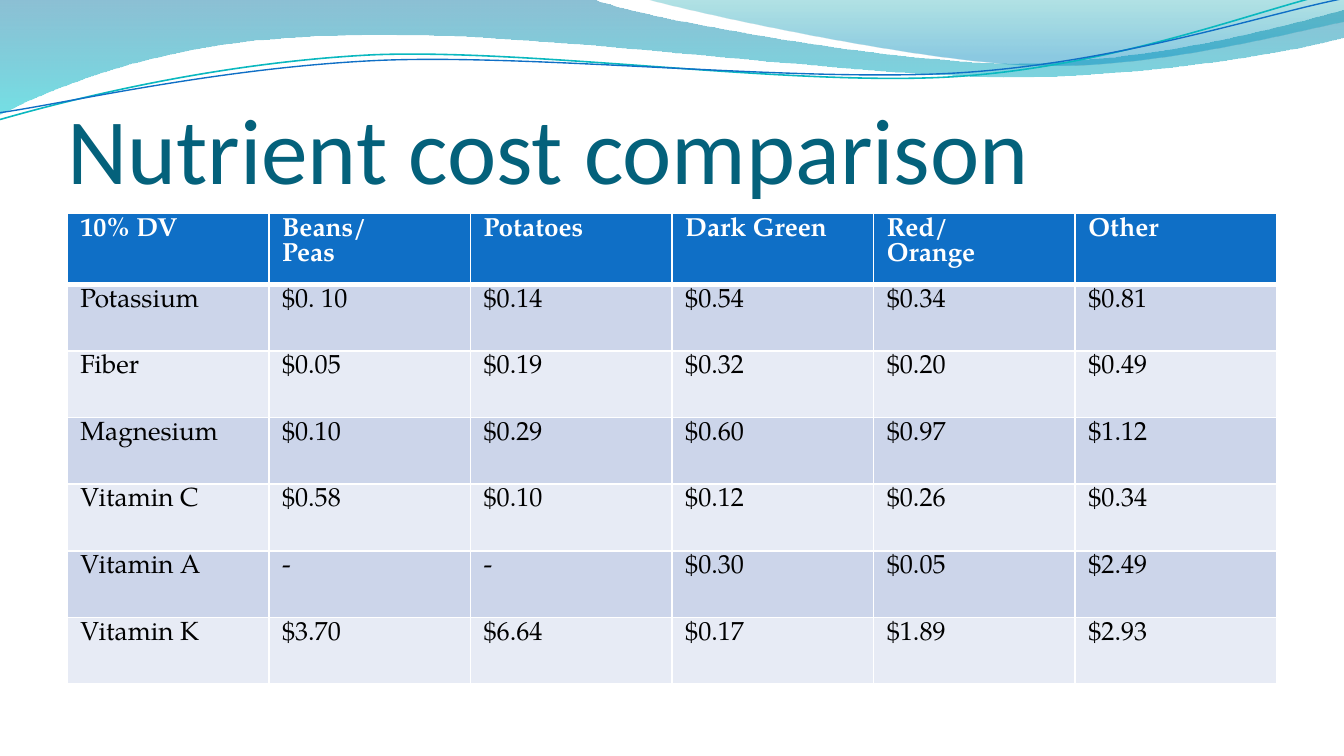
"""Build the nutrient cost comparison slide."""
from dataclasses import dataclass

from pptx import Presentation
from pptx import util as u
from pptx.dml.color import RGBColor
from pptx.enum import text
from pptx.oxml import ns, xmlchemy


@dataclass(frozen=True)
class Theme:
    title_font: str = "Calibri"
    table_font: str = "TeX Gyre Pagella"
    title_size: float = 50
    table_size: float = 14
    table_leading: float = 13.4
    title: str = "04617B"
    header: str = "0F6FC6"
    bands: tuple = ("CCD5EA", "E7EBF5")
    body_text: str = "000000"
    white: str = "FFFFFF"
    wave_stops: tuple = ((0, "0074A1", 45), (1, "00C6CF", 55))
    crest_stops: tuple = ((0, "00A1A9", 30), (0.8, "008BBF", 45))
    teal_line: str = "0AB8BF"
    blue_line: str = "0F6FC6"


def trace(shapes, start, segments, close):
    """Draw an outline in cm; two numbers make a line, six a Bezier curve."""
    points = [(u.Cm(segment[i]), u.Cm(segment[i + 1]))
              for segment in segments for i in range(0, len(segment), 2)]
    builder = shapes.build_freeform(u.Cm(start[0]), u.Cm(start[1]))
    builder.add_line_segments(points, close=close)
    outline = builder.convert_to_shape()
    outline.shadow.inherit = False
    steps = iter(list(outline._element.iter(ns.qn("a:lnTo"))))
    for segment in segments:
        legs = [next(steps) for _ in range(len(segment) // 2)]
        if len(legs) == 3:
            curve = xmlchemy.OxmlElement("a:cubicBezTo")
            legs[0].addprevious(curve)
            for leg in legs:
                curve.append(leg[0])
                leg.getparent().remove(leg)
    return outline


def add_border(cell, side, color, width):
    """Put a solid border on one side of a table cell."""
    border = xmlchemy.OxmlElement(f"a:{side}")
    border.set("w", str(u.Pt(width)))
    solid = xmlchemy.OxmlElement("a:solidFill")
    paint = xmlchemy.OxmlElement("a:srgbClr")
    paint.set("val", color)
    solid.append(paint)
    border.append(solid)
    properties = cell._tc.get_or_add_tcPr()
    properties.insert(len(properties.findall("*")) - 1, border)


theme = Theme()
deck = Presentation()
deck.slide_width, deck.slide_height = u.Cm(25.4), u.Cm(14.29)
slide = deck.slides.add_slide(deck.slide_layouts[5])

waves = [
    ((0, 0), [(11.18, -0.03), (12.09, 0.33, 16.87, 1.19, 19.25, 1.19),
              (21.67, 1.19, 24.33, 0.48, 25.4, 0.18), (25.43, 0.69),
              (24.97, 0.84, 22.1, 1.45, 18.95, 1.45),
              (15.8, 1.42, 9.7, 0.53, 6.53, 0.66),
              (3.28, 0.69, 1.17, 1.57, -0.03, 2.16), (0, 0)], theme.wave_stops),
    ((12.17, -0.03), [(12.93, 0.2, 17.32, 1.17, 19.53, 1.24),
                      (21.74, 1.32, 24.41, 0.61, 25.4, 0.41),
                      (25.4, 0), (12.17, -0.03)], theme.crest_stops),
]
for start, segments, stops in waves:
    wave = trace(slide.shapes, start, segments, True)
    wave.line.fill.background()
    wave.fill.gradient()
    wave.fill.gradient_angle = 270
    for stop, (position, color, opacity) in zip(wave.fill.gradient_stops, stops):
        stop.position = position
        stop.color.rgb = RGBColor.from_string(color)
    paints = wave._element.spPr.iter(ns.qn("a:srgbClr"))
    for paint, (position, color, opacity) in zip(paints, stops):
        alpha = xmlchemy.OxmlElement("a:alpha")
        alpha.set("val", str(opacity * 1000))
        paint.append(alpha)

ripples = [
    ((-0.04, 1.66), [(1.19, 1.37, 4.02, 0.78, 7.05, 0.77),
                     (10.07, 0.79, 15.01, 1.76, 18.06, 1.7),
                     (21.14, 1.64, 23.88, 0.68, 25.4, 0.42)], theme.teal_line, 0.85),
    ((-0.03, 1.53), [(1.16, 1.42, 4.17, 0.87, 7.2, 0.88),
                     (10.22, 0.9, 15.14, 1.69, 18.19, 1.63),
                     (21.22, 1.57, 23.98, 0.78, 25.44, 0.57)], theme.blue_line, 0.75),
]
for start, segments, color, width in ripples:
    ripple = trace(slide.shapes, start, segments, False)
    ripple.rotation = 357.3
    ripple.fill.background()
    ripple.line.color.rgb = RGBColor.from_string(color)
    ripple.line.width = u.Pt(width)

title = slide.shapes.title
slide.shapes._spTree.append(title._element)
title.left, title.top, title.width, title.height = map(u.Cm, (1.27, 1.47, 22.86, 2.38))
title.text = "Nutrient cost comparison"
frame = title.text_frame
frame.auto_size = text.MSO_AUTO_SIZE.NONE
frame.vertical_anchor = text.MSO_ANCHOR.BOTTOM
frame.margin_left = frame.margin_right = frame.margin_bottom = 0
frame.margin_top = u.Cm(0.13)
heading = frame.paragraphs[0]
heading.alignment = text.PP_ALIGN.LEFT
heading.font.name = theme.title_font
heading.font.size = u.Pt(theme.title_size)
heading.font.color.rgb = RGBColor.from_string(theme.title)

costs = [
    ("10% DV", "Beans/\nPeas", "Potatoes", "Dark Green", "Red/\nOrange", "Other"),
    ("Potassium", "$0. 10", "$0.14", "$0.54", "$0.34", "$0.81"),
    ("Fiber", "$0.05", "$0.19", "$0.32", "$0.20", "$0.49"),
    ("Magnesium", "$0.10", "$0.29", "$0.60", "$0.97", "$1.12"),
    ("Vitamin C", "$0.58", "$0.10", "$0.12", "$0.26", "$0.34"),
    ("Vitamin A", "-", "-", "$0.30", "$0.05", "$2.49"),
    ("Vitamin K", "$3.70", "$6.64", "$0.17", "$1.89", "$2.93"),
]
cost_table = slide.shapes.add_table(
    len(costs), len(costs[0]), u.Cm(1.27), u.Cm(4.03), u.Cm(22.86), u.Cm(8.9)).table
for column in cost_table.columns:
    column.width = u.Cm(3.81)
for row_index, nutrient_costs in enumerate(costs):
    is_header = row_index == 0
    cost_table.rows[row_index].height = u.Cm(1.34 if is_header else 1.26)
    fill_color = theme.header if is_header else theme.bands[(row_index - 1) % 2]
    text_color = theme.white if is_header else theme.body_text
    for column_index, entry in enumerate(nutrient_costs):
        cell = cost_table.cell(row_index, column_index)
        cell.text = entry
        cell.margin_left = cell.margin_right = u.Cm(0.25)
        cell.margin_top = cell.margin_bottom = u.Cm(0.1)
        cell.fill.solid()
        cell.fill.fore_color.rgb = RGBColor.from_string(fill_color)
        for side in ("lnL", "lnR", "lnT", "lnB"):
            header_edge = (row_index, side) in ((0, "lnB"), (1, "lnT"))
            add_border(cell, side, theme.white, 3 if header_edge else 1)
        for paragraph in cell.text_frame.paragraphs:
            paragraph.line_spacing = u.Pt(theme.table_leading)
            paragraph.font.name = theme.table_font
            paragraph.font.size = u.Pt(theme.table_size)
            paragraph.font.bold = is_header
            paragraph.font.color.rgb = RGBColor.from_string(text_color)

deck.save("out.pptx")
